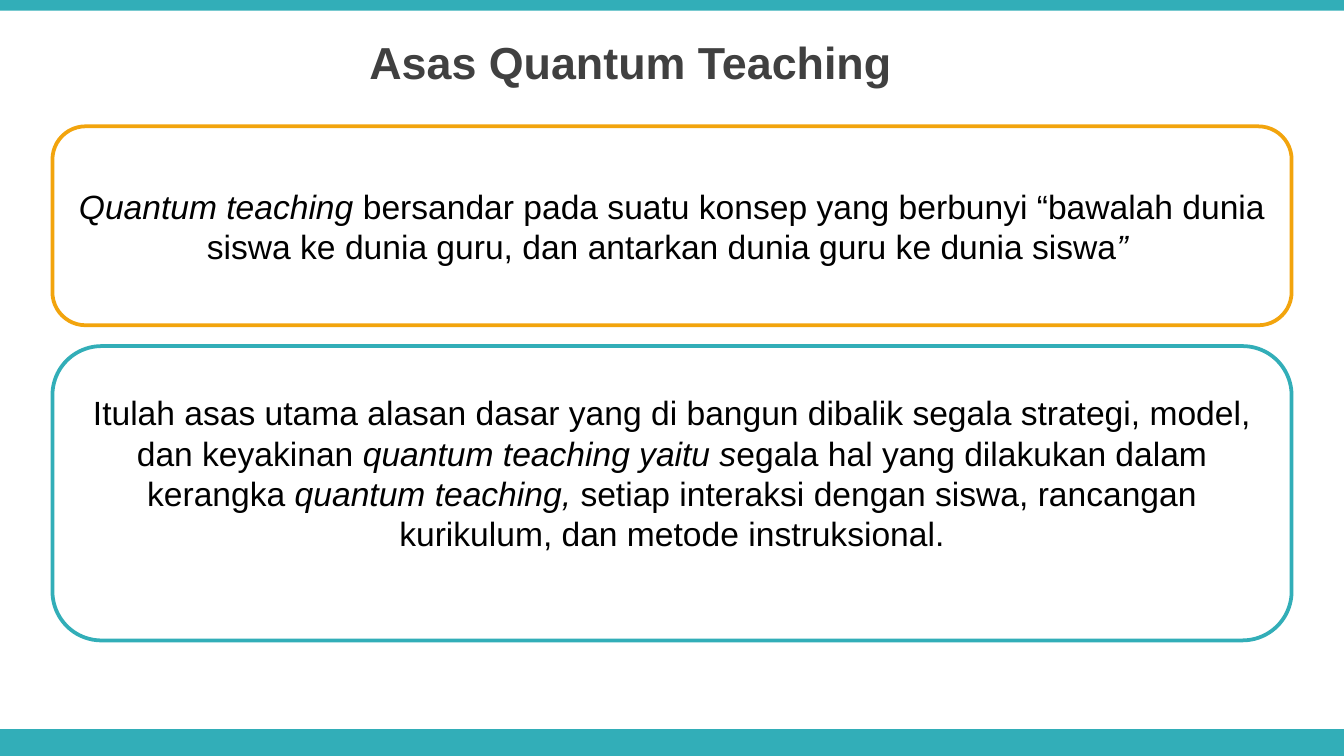
from dataclasses import dataclass

from pptx import Presentation
from pptx import util as u
from pptx.dml.color import RGBColor
from pptx.enum import shapes, text

PX = u.Inches(1) // 200
PAGE_WIDTH, PAGE_HEIGHT = 2000, 1125


@dataclass(frozen=True)
class Theme:
    font: str = "Arial"
    teal: str = "32AEB8"
    orange: str = "F2A40D"
    white: str = "FFFFFF"
    heading: str = "404040"
    ink: str = "000000"
    title_size: int = 24
    body_size: int = 18
    outline: int = 2


THEME = Theme()


def scaled(box):
    return [length * PX for length in box]


def add_block(page, box, kind, fill, outline=None):
    shape = page.shapes.add_shape(kind, *scaled(box))
    shape.shadow.inherit = False
    shape.fill.solid()
    shape.fill.fore_color.rgb = RGBColor.from_string(fill)
    if outline:
        shape.line.color.rgb = RGBColor.from_string(outline)
        shape.line.width = u.Pt(THEME.outline)
    else:
        shape.line.fill.background()
    return shape


def write(shape, spans, *, size, color, bold=False, bottom=10):
    """Fill the shape with one centred paragraph of (words, italic) spans."""
    frame = shape.text_frame
    frame.word_wrap = True
    frame.vertical_anchor = text.MSO_ANCHOR.MIDDLE
    frame.margin_left = frame.margin_right = 20 * PX
    frame.margin_top, frame.margin_bottom = 10 * PX, bottom * PX
    para = frame.paragraphs[0]
    para.alignment = text.PP_ALIGN.CENTER
    for words, italic in spans:
        span = para.add_run()
        span.text = words
        span.font.name = THEME.font
        span.font.size = u.Pt(size)
        span.font.bold = bold
        span.font.italic = italic
        span.font.color.rgb = RGBColor.from_string(color)


def add_bars(page, box):
    left, top, width, height = box
    for offset, thickness in ((0, 16), (height - 40, 40)):
        add_block(page, (left, top + offset, width, thickness),
                  shapes.MSO_SHAPE.RECTANGLE, THEME.teal)


def add_title(page, box, words):
    write(page.shapes.add_textbox(*scaled(box)), [(words, False)],
          size=THEME.title_size, color=THEME.heading, bold=True)


def add_panel(page, box, spans, outline, bottom=10):
    panel = add_block(page, box, shapes.MSO_SHAPE.ROUNDED_RECTANGLE,
                      THEME.white, outline)
    write(panel, spans, size=THEME.body_size, color=THEME.ink, bottom=bottom)


def main():
    deck = Presentation()
    deck.slide_width, deck.slide_height = scaled((PAGE_WIDTH, PAGE_HEIGHT))
    page = deck.slides.add_slide(deck.slide_layouts[6])

    add_bars(page, (0, 0, PAGE_WIDTH, PAGE_HEIGHT))
    add_title(page, (0, 28, 1876, 126), "Asas Quantum Teaching")

    margin = 78
    width = PAGE_WIDTH - 2 * margin
    add_panel(page, (margin, 188, width, 296), [
        ("Quantum teaching ", True),
        ("bersandar pada suatu konsep yang berbunyi “bawalah dunia siswa "
         "ke dunia guru, dan antarkan dunia guru ke dunia siswa", False),
        ("” ", True),
    ], THEME.orange)
    add_panel(page, (margin, 515, width, 438), [
        ("Itulah asas utama alasan dasar yang di bangun dibalik segala "
         "strategi, model, dan keyakinan ", False),
        ("quantum teaching yaitu s", True),
        ("egala hal yang dilakukan dalam kerangka ", False),
        ("quantum teaching, ", True),
        ("setiap interaksi dengan siswa, rancangan kurikulum, dan metode "
         "instruksional.", False),
    ], THEME.teal, bottom=70)

    deck.save("out.pptx")


if __name__ == "__main__":
    main()
